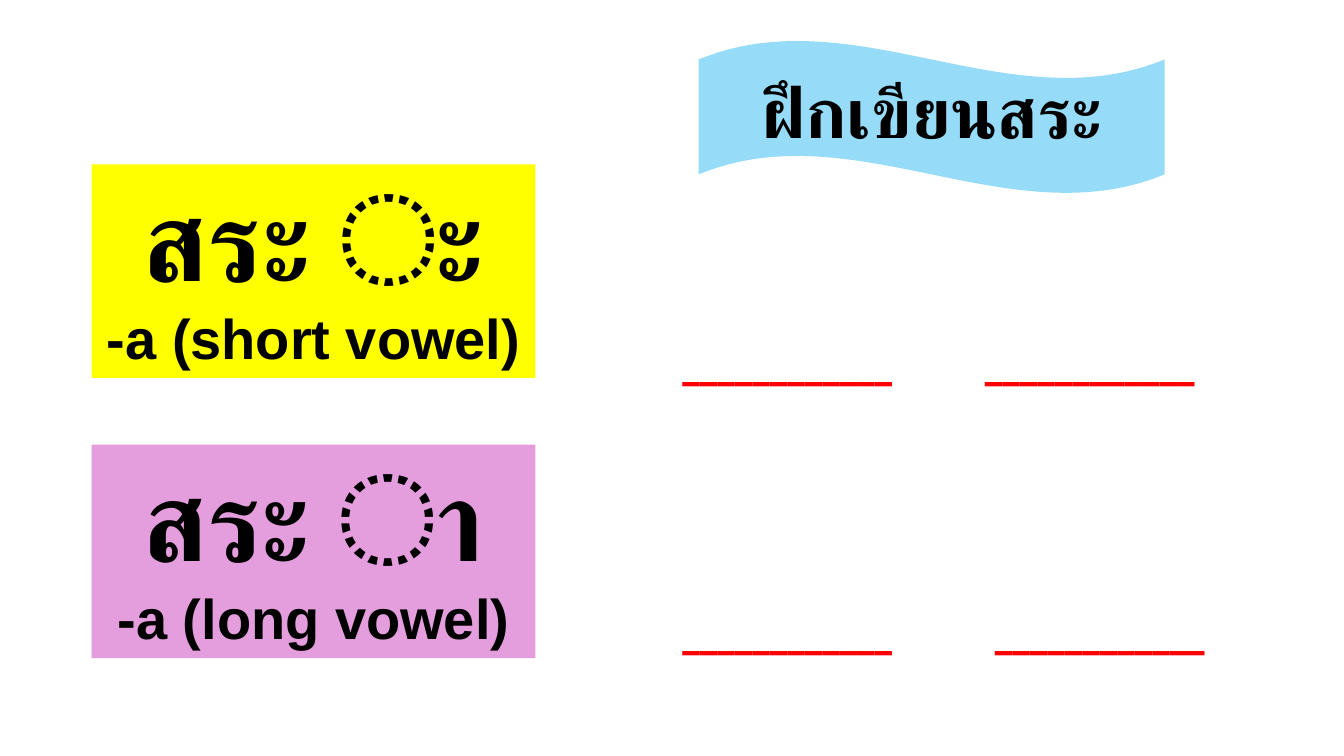
from lxml import etree
from pptx import Presentation
from pptx import util as u
from pptx.dml.color import RGBColor
from pptx.enum import shapes, text
from pptx.oxml.ns import qn

COLORS = {
    "ink": "000000",
    "short": "FFFF00",
    "long": "E59EDD",
    "banner": "96DCF8",
    "writing": "FF0000",
}
BLANK_RULE = "_" * 12


def format_runs(paragraph, size, font, color):
    for run in paragraph.runs:
        run.font.size = u.Pt(size)
        run.font.name = font
        run.font.bold = True
        run.font.color.rgb = RGBColor.from_string(COLORS[color])


def add_panel(slide, preset, box, color):
    panel = slide.shapes.add_shape(preset, *map(u.Inches, box))
    panel.shadow.inherit = False
    panel.fill.solid()
    panel.fill.fore_color.rgb = RGBColor.from_string(COLORS[color])
    panel.line.fill.background()
    return panel


def add_vowel_card(slide, box, vowel, sound, color):
    card = add_panel(slide, shapes.MSO_SHAPE.RECTANGLE, box, color)
    frame = card.text_frame
    frame.vertical_anchor = text.MSO_ANCHOR.TOP
    frame.text = f"{vowel}\n{sound}"
    for paragraph, size in zip(frame.paragraphs, (80, 40)):
        paragraph.alignment = text.PP_ALIGN.CENTER
        format_runs(paragraph, size, "Arial", "ink")


def add_banner(slide, box, title):
    banner = add_panel(slide, shapes.MSO_SHAPE.WAVE, box, "banner")
    frame = banner.text_frame
    frame.vertical_anchor = text.MSO_ANCHOR.BOTTOM
    frame.text = title
    heading = frame.paragraphs[0]
    heading.alignment = text.PP_ALIGN.CENTER
    heading.line_spacing = 0.7
    heading.space_after = u.Pt(6)
    format_runs(heading, 50, "Roboto", "ink")


def add_writing_row(slide, box, second_blank):
    row = slide.shapes.add_textbox(*map(u.Inches, box))
    frame = row.text_frame
    frame.word_wrap = True
    frame.text = f"{BLANK_RULE}\t{BLANK_RULE}"
    blanks = frame.paragraphs[0]
    stops = etree.SubElement(blanks._p.get_or_add_pPr(), qn("a:tabLst"))
    etree.SubElement(stops, qn("a:tab"), pos=str(u.Inches(second_blank)), algn="l")
    format_runs(blanks, 28, "Roboto", "writing")


def main():
    deck = Presentation()
    deck.slide_width, deck.slide_height = u.Inches(13.33), u.Inches(7.5)
    slide = deck.slides.add_slide(deck.slide_layouts[6])

    lessons = [
        ("สระ ◌ะ", "-a (short vowel)", "short", 1.63, 3.36, 3.0),
        ("สระ ◌า", "-a (long vowel)", "long", 4.41, 6.03, 3.1),
    ]
    for vowel, sound, color, card_top, row_top, second_blank in lessons:
        add_vowel_card(slide, (0.91, card_top, 4.4, 2.12), vowel, sound, color)
        add_writing_row(slide, (6.67, row_top, 6.35, 0.57), second_blank)
    add_banner(slide, (6.93, 0.4, 4.62, 1.52), "ฝึกเขียนสระ")

    deck.save("out.pptx")


if __name__ == "__main__":
    main()
